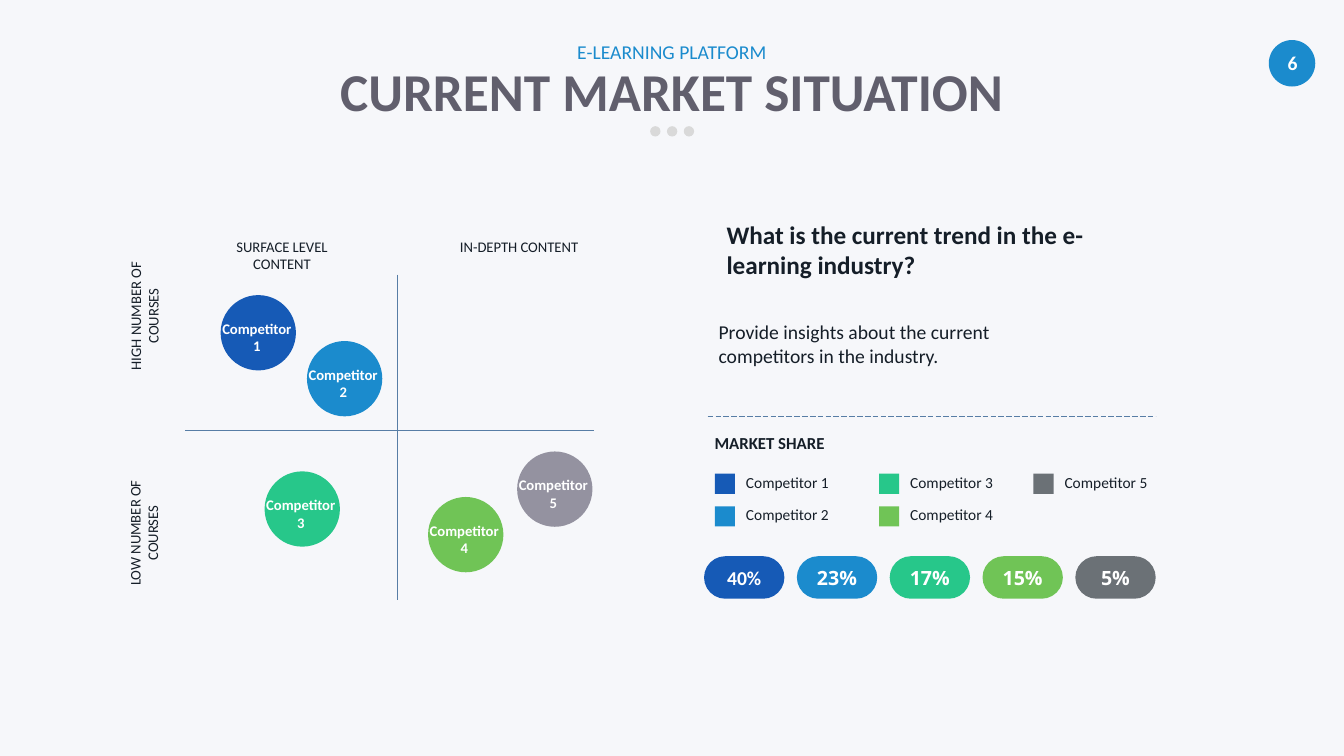
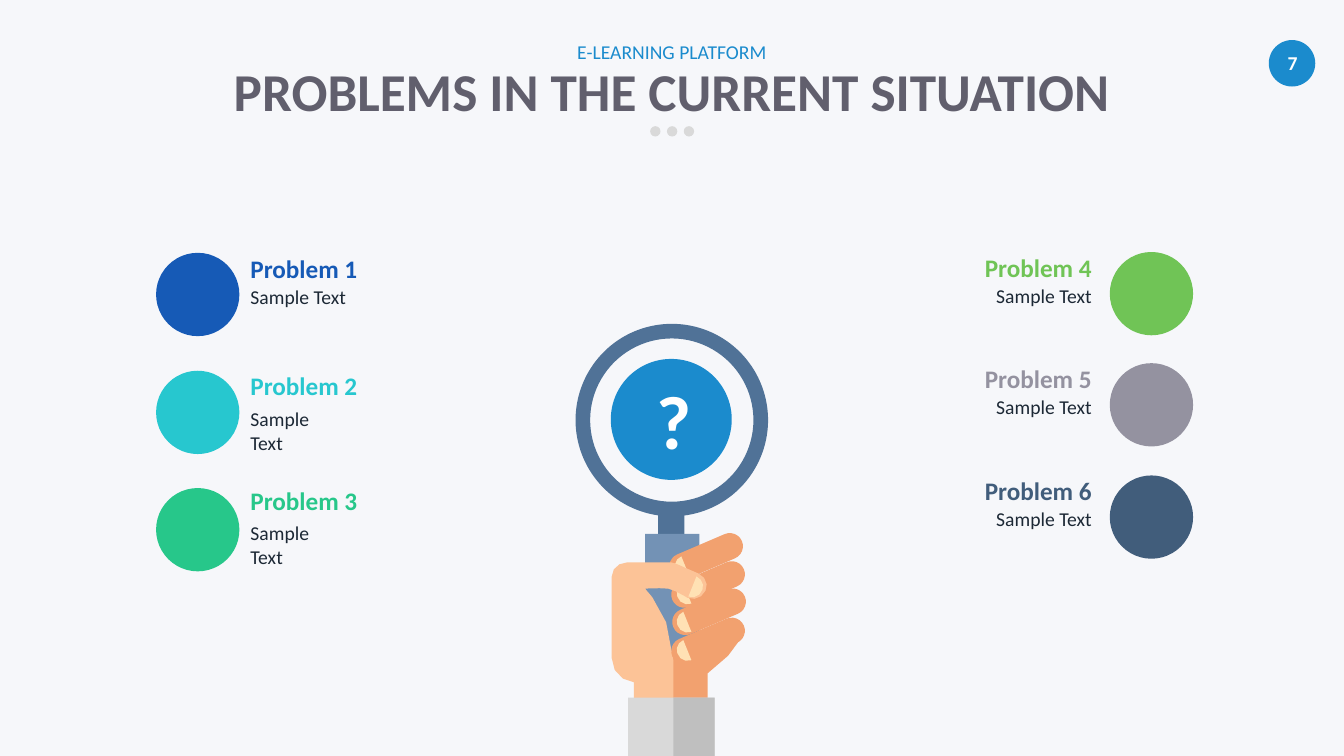
import lxml.etree
import pptx
import pptx.dml.color
import pptx.enum.dml
import pptx.enum.shapes
import pptx.enum.text
import pptx.oxml.ns
import pptx.util

COLOURS = {
    "background": "F6F7FA", "heading": "615F6D", "ink": "151E28", "sample": "1C2835",
    "white": "FFFFFF", "dot": "D9D9D9", "axis": "577DA5",
    "royal": "165AB6", "blue": "1B8BCD", "teal": "27C7CF", "green": "27C78A",
    "lime": "70C456", "mauve": "9492A0", "grey": "6B7176", "navy": "415D7B",
    "steel": "507297", "grip": "7392B5", "skin": "FCC397", "tan": "F2A16F",
    "nail": "FFE1B4", "cuff": "D9D9D9", "cuff shade": "BFBFBF",
}
SHAPE = pptx.enum.shapes.MSO_SHAPE
ALIGN = pptx.enum.text.PP_ALIGN
ANCHOR = pptx.enum.text.MSO_ANCHOR


def place(slide, kind, box, colour=None):
    """Add a text box (kind None), a preset shape, or an outline given as points."""
    lengths = [pptx.util.Pt(value) for value in box]
    if kind is None:
        return slide.shapes.add_textbox(*lengths)
    if isinstance(kind, list):
        builder = slide.shapes.build_freeform(*kind[0])
        builder.add_line_segments(kind[1:], close=True)
        shape = builder.convert_to_shape(*lengths)
    else:
        shape = slide.shapes.add_shape(kind, *lengths)
    shape.shadow.inherit = False
    shape.fill.solid()
    shape.fill.fore_color.rgb = pptx.dml.color.RGBColor.from_string(COLOURS[colour])
    shape.line.fill.background()
    return shape


def write(shape, text, size=14, colour="ink", bold=False, align=ALIGN.LEFT,
          anchor=ANCHOR.TOP, font="Calibri", wrap=True, insets=(7.2, 3.6, 7.2, 3.6)):
    frame = shape.text_frame
    frame.text = text
    frame.auto_size = pptx.enum.text.MSO_AUTO_SIZE.NONE
    frame.word_wrap = wrap
    frame.vertical_anchor = anchor
    frame.margin_left, frame.margin_top, frame.margin_right, frame.margin_bottom = [
        pptx.util.Pt(inset) for inset in insets]
    for paragraph in frame.paragraphs:
        paragraph.alignment = align
        paragraph.font.name = font
        paragraph.font.size = pptx.util.Pt(size)
        paragraph.font.bold = bold
        paragraph.font.color.rgb = pptx.dml.color.RGBColor.from_string(COLOURS[colour])


CENTRED = {"align": ALIGN.CENTER, "anchor": ANCHOR.MIDDLE, "wrap": False,
           "insets": (0, 0, 0, 0)}

deck = pptx.Presentation()
deck.slide_width, deck.slide_height = pptx.util.Pt(960), pptx.util.Pt(540)

# Shared layout: background and title position
layout = deck.slide_layouts[5]
layout.background.fill.solid()
layout.background.fill.fore_color.rgb = pptx.dml.color.RGBColor.from_string(
    COLOURS["background"])
heading = layout.placeholders[0]
heading.top, heading.height = pptx.util.Pt(41.2), pptx.util.Pt(46)

# Header and page badge of every slide; each title is as wide as its words
titles = [("CURRENT MARKET SITUATION", 482.4), ("PROBLEMS IN THE CURRENT SITUATION", 636.5)]
for page, (title, width) in enumerate(titles, start=6):
    slide = deck.slides.add_slide(layout)
    slide.shapes.title.left = pptx.util.Pt(480 - width / 2)
    slide.shapes.title.top, slide.shapes.title.height = heading.top, heading.height
    slide.shapes.title.width = pptx.util.Pt(width)
    write(slide.shapes.title, title, size=38, colour="heading", bold=True, **CENTRED)
    write(place(slide, None, (411.2, 28.3, 137.5, 17.3)), "E-LEARNING PLATFORM",
          colour="blue", **CENTRED)
    for dot in range(3):
        place(slide, SHAPE.OVAL, (464.4 + 12 * dot, 90.1, 7.4, 7.4), "dot")
    badge = place(slide, SHAPE.OVAL, (906.3, 28.6, 33.2, 33.2), "blue")
    write(badge, str(page), colour="white", bold=True,
          **{**CENTRED, "insets": (1, 0, 0, 1.4)})

market, problems = deck.slides

# Market: axes of the quadrant and the divider
for x1, y1, x2, y2, dash in [
    (283.7, 196.2, 283.7, 428.4, None),
    (132.4, 307.4, 424, 307.4, None),
    (505.5, 297.4, 825.4, 297.4, pptx.enum.dml.MSO_LINE.LONG_DASH),
]:
    line = market.shapes.add_connector(
        pptx.enum.shapes.MSO_CONNECTOR.STRAIGHT,
        *[pptx.util.Pt(value) for value in (x1, y1, x2, y2)])
    line.line.color.rgb = pptx.dml.color.RGBColor.from_string(COLOURS["axis"])
    line.line.width = pptx.util.Pt(0.5)
    line.line.dash_style = dash
    lxml.etree.SubElement(line._element.spPr, pptx.oxml.ns.qn("a:effectLst"))

# Market: axis labels
for label, box, rotation in [
    ("SURFACE LEVEL CONTENT", (153.2, 166.1, 96.5, 32.4), 0),
    ("IN-DEPTH CONTENT", (319.7, 166.3, 102.2, 20.2), 0),
    ("HIGH NUMBER OF COURSES", (54.7, 209.5, 96.5, 32.4), 270),
    ("LOW NUMBER OF COURSES", (46.8, 364.6, 111.6, 32.4), 270),
]:
    axis_label = place(market, None, box)
    axis_label.rotation = rotation
    write(axis_label, label, size=10.5, align=ALIGN.CENTER)

# Market: competitors in the quadrant
bubbles = [(157.6, 210.8, "royal"), (219.3, 243.6, "blue"), (189, 336.7, "green"),
           (305.8, 355, "lime"), (369.4, 322.5, "mauve")]
for number, (x, y, colour) in enumerate(bubbles, start=1):
    bubble = place(market, SHAPE.OVAL, (x, y, 53.8, 53.8), colour)
    write(bubble, f"Competitor\n{number}", size=10.5, colour="white", bold=True,
          **{**CENTRED, "insets": (0, 6.4, 2, 0)})

# Market: question and insight
write(place(market, None, (511.9, 152.8, 316.8, 51.1)),
      "What is the current trend in the e-learning industry?", size=18, bold=True)
write(place(market, None, (506.2, 225.1, 265.7, 41)),
      "Provide insights about the current competitors in the industry.")

# Market: share legend, filled column by column, and share pills
write(place(market, None, (503.3, 305.3, 274.3, 21.6)), "MARKET SHARE", size=12, bold=True)
legend_columns = [510.6, 627.9, 738.2]
shares = [("40%", "royal", "Calibri"), ("23%", "blue", "Open Sans"),
          ("17%", "green", "Open Sans"), ("15%", "lime", "Open Sans"),
          ("5%", "grey", "Open Sans")]
for index, (share, colour, font) in enumerate(shares):
    column, row = divmod(index, 2)
    x, y = legend_columns[column], 338.4 + 23.3 * row
    place(market, SHAPE.RECTANGLE, (x, y, 14.4, 14.4), colour)
    write(place(market, None, (x + 15.1, y - 4.3, 135.4, 20.9)),
          f"Competitor {index + 1}", size=11)
    pill = place(market, SHAPE.ROUNDED_RECTANGLE,
                 (502.9 + 66.3 * index, 397.3, 57.4, 30.4), colour)
    pill.adjustments[0] = 0.5
    write(pill, share, colour="white", bold=True, font=font, **CENTRED)

# Problems: magnifier
place(problems, SHAPE.RECTANGLE, (470.2, 364.3, 18.7, 19.4), "steel")
place(problems, SHAPE.RECTANGLE, (460.8, 381.3, 38.9, 83.5), "grip")
ring = place(problems, SHAPE.DONUT, (411.1, 231.3, 137.5, 137.5), "steel")
ring.adjustments[0] = 0.076

# Problems: hand outlines; two numbers make a line, six a Bézier curve
wrist = [(0, 0), (0, 0, -3.6, 11.5, -23.1, 25.2), (-23.1, 44.6), (-49, 44.6), (-49, 11.5)]
nail = [(0, 0), (-1.4, -3.6, 0.7, -7.9, 4.3, -9.4), (10.1, 5), (5.8, 6.5, 1.4, 4.3, 0, 0)]
thumb_nail = [tuple(-v if i % 2 == 0 else v for i, v in enumerate(step)) for step in nail]
palm = [(499, 409.7), (482.4, 402.5), (480.2, 401, 473.8, 401.8, 472.3, 401.8),
        (447.8, 401.8), (442.1, 401.8, 437, 406.1, 437, 411.8), (437, 470.2),
        (437, 479.5, 444.2, 486.7, 452.9, 487.4), (452.9, 500.4), (481, 500.4),
        (481, 471.6), (481, 439.9, 460.8, 420.5, 460.8, 420.5),
        (460.8, 420.5, 473, 419.8, 477.4, 420.5), (481.7, 421.2, 491, 427, 491, 427),
        (496.1, 429.1, 501.8, 427, 504, 421.9), (506.2, 417.6, 504, 411.8, 499, 409.7)]
# A finger has no outline: it is a tilted pill around its centre
finger = None
hand = [
    (wrist, 528.5, 455.8, "tan"),
    (finger, 504.4, 397.4, "tan"), (nail, 482.4, 406.8, "nail"),
    (finger, 505.8, 417.5, "tan"), (nail, 483.8, 426.2, "nail"),
    (palm, 0, 0, "skin"), (thumb_nail, 501.8, 421.2, "nail"),
    (finger, 506.5, 437, "tan"), (nail, 483.8, 446.4, "nail"),
    (finger, 505.8, 457.8, "tan"), (nail, 483.8, 466.6, "nail"),
]
for steps, x, y, colour in hand:
    if steps is finger:
        pill = place(problems, SHAPE.ROUNDED_RECTANGLE, (x - 27.8, y - 9.4, 55.6, 18.8), colour)
        pill.adjustments[0] = 0.5
        pill.rotation = -23.2
        continue
    points = [steps[0]]
    for step in steps[1:]:
        if len(step) == 2:
            points.append(step)
            continue
        corners = [points[-1], step[:2], step[2:4], step[4:]]
        for t in (0.33, 0.67, 1):
            weights = ((1 - t) ** 3, 3 * t * (1 - t) ** 2, 3 * t * t * (1 - t), t ** 3)
            points.append(tuple(sum(w * corner[axis] for w, corner in zip(weights, corners))
                                for axis in (0, 1)))
    outline = [(pptx.util.Pt(px), pptx.util.Pt(py)) for px, py in points]
    place(problems, outline, (x, y), colour)

# Problems: sleeve
place(problems, SHAPE.RECTANGLE, (448.6, 498.4, 61.9, 41.6), "cuff")
place(problems, SHAPE.RECTANGLE, (481, 498.4, 29.5, 41.6), "cuff shade")

# Problems: lens with the question mark
lens = place(problems, SHAPE.OVAL, (436.3, 256.4, 86.4, 86.4), "blue")
write(lens, "?", size=54, colour="white", bold=True, **{**CENTRED, "insets": (4, 0, 0, 0)})

# Problems: three on each side, with the tops of circle, heading and text
entries = [
    ("royal", 180.6, 177.1, 200.2, 254), ("teal", 264.8, 261, 287.2, 80),
    ("green", 348.6, 343.4, 368.8, 80), ("lime", 180, 176.7, 199.4, 254),
    ("mauve", 259.4, 256.3, 278.6, 254), ("navy", 339.6, 336.2, 358.6, 254),
]
for number, (colour, circle_top, name_top, text_top, text_width) in enumerate(entries, start=1):
    on_left = number <= 3
    align = ALIGN.LEFT if on_left else ALIGN.RIGHT
    place(problems, SHAPE.OVAL, (111.5 if on_left else 792.7, circle_top, 59.5, 59.5), colour)
    for text, top, width, size, ink in [
        (f"Problem {number}", name_top, 91.4, 18, colour),
        ("Sample Text", text_top, text_width, 14, "sample"),
    ]:
        left = 171.8 if on_left else 787 - width
        write(place(problems, None, (left, top, width, size * 1.2 + 7.2)), text,
              size=size, colour=ink, bold=size == 18, align=align)

deck.save("out.pptx")
